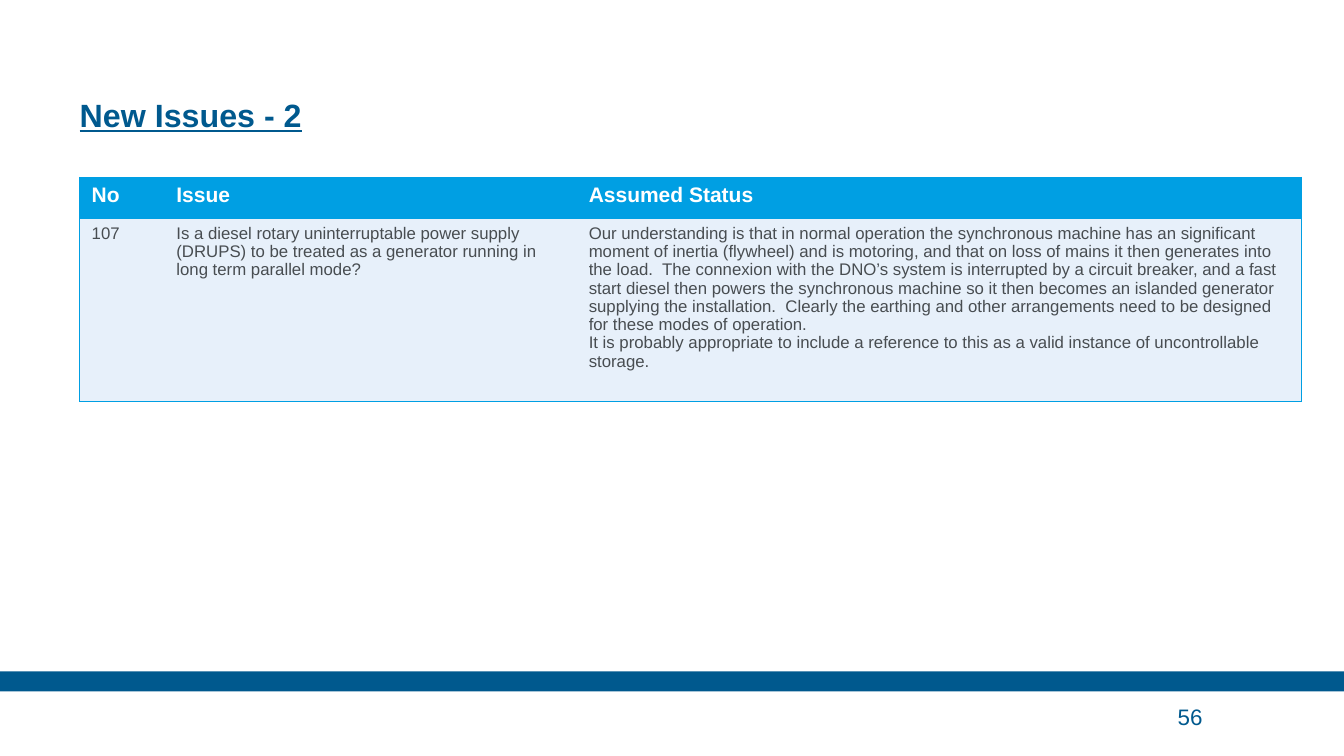
from lxml import etree
from pptx import Presentation
from pptx.dml.color import RGBColor
from pptx.enum.shapes import MSO_SHAPE
from pptx.enum.text import MSO_ANCHOR, MSO_AUTO_SIZE, PP_ALIGN
from pptx.oxml.ns import qn
from pptx.util import Inches, Pt

RECTANGLE = MSO_SHAPE.RECTANGLE
BOTTOM, MIDDLE, TOP = MSO_ANCHOR.BOTTOM, MSO_ANCHOR.MIDDLE, MSO_ANCHOR.TOP
NO_AUTOFIT = MSO_AUTO_SIZE.NONE
LEFT = PP_ALIGN.LEFT

NAVY, SKY, PALE, GREY, WHITE = "00598E", "009FE3", "E7F0FA", "484D51", "FFFFFF"
TITLE_FORMAT = {"size": Pt(23), "bold": True, "underline": True}
NUMBER_FORMAT = {"size": Pt(16)}
HEADER_FORMAT = {"size": Pt(15), "bold": True}
BODY_FORMAT = {"size": Pt(12), "bold": False}

COLUMN_WIDTHS = [0.84, 4.09, 7.19]
ROW_HEIGHTS = [0.41, 1.81]
ISSUES = [
    ["No", "Issue", "Assumed Status"],
    [
        "107",
        "Is a diesel rotary uninterruptable power supply (DRUPS) to be treated as "
        "a generator running in long term parallel mode?",
        "Our understanding is that in normal operation the synchronous machine has "
        "an significant moment of inertia (flywheel) and is motoring, and that on "
        "loss of mains it then generates into the load.  The connexion with the "
        "DNO’s system is interrupted by a circuit breaker, and a fast start diesel "
        "then powers the synchronous machine so it then becomes an islanded "
        "generator supplying the installation.  Clearly the earthing and other "
        "arrangements need to be designed for these modes of operation.\n"
        "It is probably appropriate to include a reference to this as a valid "
        "instance of uncontrollable storage.",
    ],
]


def colour(value):
    return RGBColor.from_string(value)


class IssueSlide:
    """Holds the slide and its font, and adds each kind of element."""

    def __init__(self, page, font_name):
        self.page = page
        self.font_name = font_name

    def set_text(self, frame, text, ink, formats, spacing):
        frame.text = text
        for para in frame.paragraphs:
            para.alignment = LEFT
            para.line_spacing = spacing
            para.space_before = Pt(0)
            para.font.name = self.font_name
            para.font.color.rgb = colour(ink)
            for name, value in formats.items():
                setattr(para.font, name, value)

    def place(self, box, area, anchor):
        sides = ("left", "top", "width", "height")
        for name, value in zip(sides, area):
            setattr(box, name, Inches(value))
        frame = box.text_frame
        frame.word_wrap = True
        frame.auto_size = NO_AUTOFIT
        frame.vertical_anchor = anchor
        for side in ("left", "top", "right", "bottom"):
            setattr(frame, f"margin_{side}", 0)

    def title(self, text, area):
        box = self.page.shapes.title
        self.place(box, area, BOTTOM)
        self.set_text(box.text_frame, text, NAVY, TITLE_FORMAT, Pt(30))

    def number(self, text, area):
        box = self.page.shapes.add_textbox(*map(Inches, area))
        self.place(box, area, MIDDLE)
        self.set_text(box.text_frame, text, NAVY, NUMBER_FORMAT, 1.0)

    def bar(self, area):
        shape = self.page.shapes.add_shape(RECTANGLE, *map(Inches, area))
        shape.shadow.inherit = False
        shape.fill.solid()
        shape.fill.fore_color.rgb = colour(NAVY)
        shape.line.fill.background()

    def borders(self, cell, edges):
        properties = cell._tc.get_or_add_tcPr()
        for index, (tag, shown) in enumerate(edges.items()):
            line = etree.Element(qn(f"a:{tag}"), w=str(Pt(1)))
            if shown:
                fill = etree.SubElement(line, qn("a:solidFill"))
                etree.SubElement(fill, qn("a:srgbClr"), val=SKY)
            else:
                etree.SubElement(line, qn("a:noFill"))
            properties.insert(index, line)

    def table(self, rows, area):
        table = self.page.shapes.add_table(
            len(rows), len(rows[0]), *map(Inches, area)
        ).table
        table.horz_banding = False
        for column, width in zip(table.columns, COLUMN_WIDTHS):
            column.width = Inches(width)
        for row, height in zip(table.rows, ROW_HEIGHTS):
            row.height = Inches(height)
        last_column = len(rows[0]) - 1
        for row_index, texts in enumerate(rows):
            if row_index == 0:
                fill, ink, formats, spacing = SKY, WHITE, HEADER_FORMAT, 1.0
            else:
                fill, ink, formats, spacing = PALE, GREY, BODY_FORMAT, 0.97
            for column_index, text in enumerate(texts):
                cell = table.cell(row_index, column_index)
                cell.margin_left = cell.margin_right = Inches(0.12)
                cell.margin_top = cell.margin_bottom = Inches(0.06)
                cell.vertical_anchor = TOP
                cell.fill.solid()
                cell.fill.fore_color.rgb = colour(fill)
                self.set_text(cell.text_frame, text, ink, formats, spacing)
                self.borders(cell, {
                    "lnL": column_index == 0,
                    "lnR": column_index == last_column,
                    "lnT": True,
                    "lnB": True,
                })


def main():
    deck = Presentation()
    deck.slide_width, deck.slide_height = Inches(13.33), Inches(7.5)
    page = deck.slides.add_slide(deck.slide_layouts[5])
    slide = IssueSlide(page, "Arial")
    slide.bar((0, 6.66, 13.33, 0.2))
    slide.title("New Issues - 2", (0.79, 0.31, 9.84, 1.02))
    slide.number("56", (11.68, 6.91, 1.23, 0.39))
    slide.table(ISSUES, (0.79, 1.76, sum(COLUMN_WIDTHS), sum(ROW_HEIGHTS)))
    deck.save("out.pptx")


if __name__ == "__main__":
    main()
